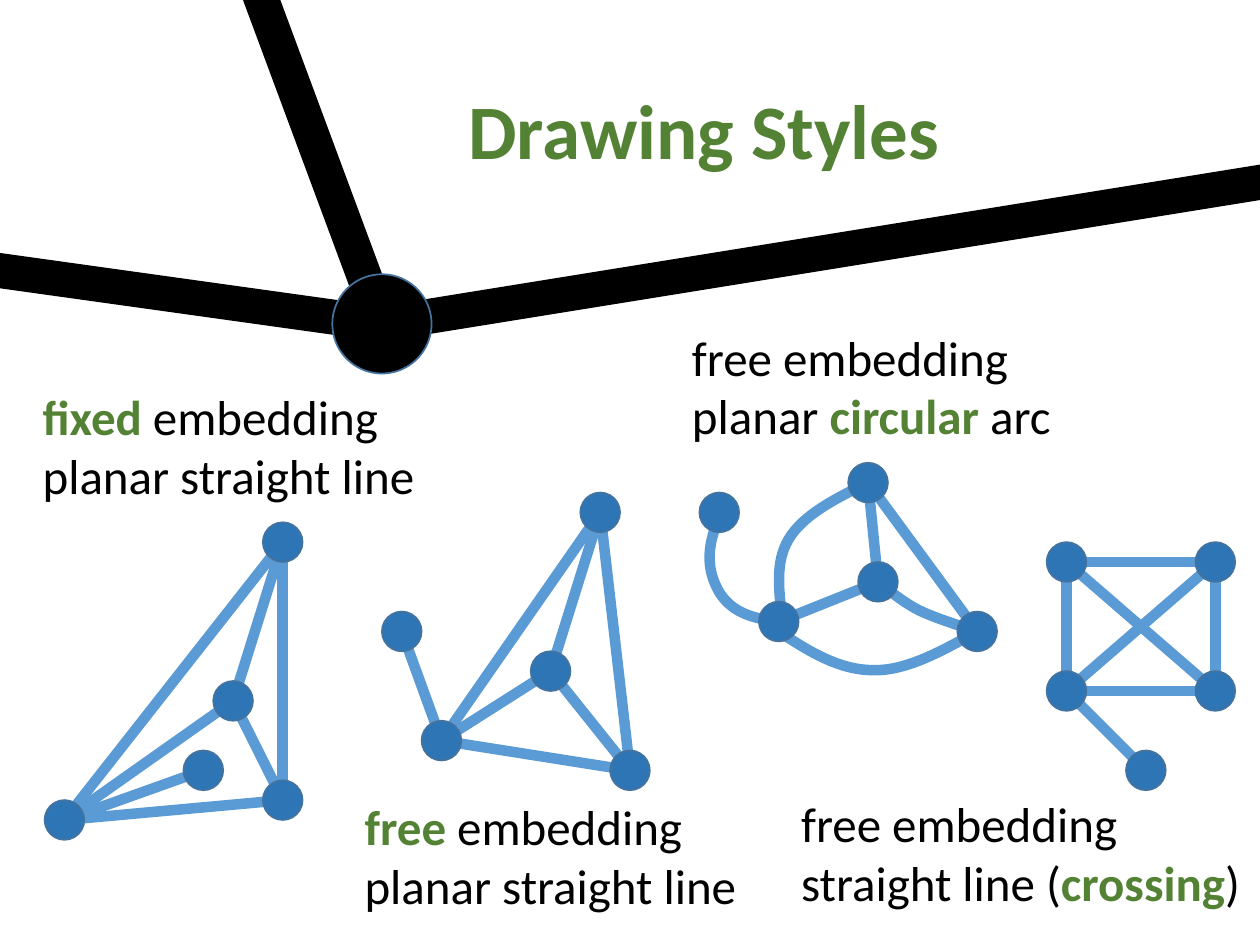
import pptx
import pptx.util
import pptx.dml.color
import pptx.enum.shapes
import pptx.enum.text
import pptx.oxml.ns
import pptx.oxml.xmlchemy

theme = {
    "font": "Calibri", "title": 44, "label": 28,
    "text": "000000", "green": "548235", "hub": "000000",
    "node": "2E75B6", "rim": "43739E", "edge": "5B9BD5",
}
rgb = pptx.dml.color.RGBColor.from_string
make = pptx.oxml.xmlchemy.OxmlElement
oval = pptx.enum.shapes.MSO_SHAPE.OVAL
straight = pptx.enum.shapes.MSO_CONNECTOR.STRAIGHT

# Grid: 2 mm cells, with the origin set in by a part of a cell
cell = pptx.util.Mm(2)
left, top = cell * 0.5, cell * 0.65

deck = pptx.Presentation()
deck.slide_width, deck.slide_height = pptx.util.Inches(10), pptx.util.Inches(7.5)
slide = deck.slides.add_slide(deck.slide_layouts[6])


def write(shapes, text, box, size, align="LEFT"):
    """Add a text box; words between asterisks are bold and green."""
    x, y, wide, high = box
    frame = shapes.add_textbox(int(left + x * cell), int(top + y * cell),
                               int(wide * cell), int(high * cell)).text_frame
    frame.word_wrap = False
    frame.auto_size = pptx.enum.text.MSO_AUTO_SIZE.SHAPE_TO_FIT_TEXT
    for i, row in enumerate(text.split("\n")):
        para = frame.paragraphs[0] if i == 0 else frame.add_paragraph()
        para.alignment = getattr(pptx.enum.text.PP_ALIGN, align)
        for j, part in enumerate(row.split("*")):
            if part:
                run = para.add_run()
                run.text = part
                run.font.name = theme["font"]
                run.font.size = pptx.util.Pt(size)
                run.font.bold = j % 2 == 1
                run.font.color.rgb = rgb(theme["green" if j % 2 else "text"])


def link(shapes, start, end, color, width):
    """Add a straight line between two grid points."""
    ends = [int(edge + v * cell) for point in (start, end)
            for edge, v in zip((left, top), point)]
    line = shapes.add_connector(straight, *ends)
    line.line.color.rgb = rgb(color)
    line.line.width = pptx.util.Pt(width)
    line._element.spPr.append(make("a:effectLst"))


# Figures: nodes by key, straight edges as key pairs, curves, label and its box
full = "tm tr lr lm lt rm lx"
arcs = [
    [(78, 63), (81, 65), (84.1, 66.9), (87.5, 66.9),
     (90.8, 67), (94.4, 65), (98, 63)],
    [(88, 58), (89.3, 59), (90.6, 60.1), (92.2, 60.9),
     (93.9, 61.7), (95.9, 62.3), (98, 63)],
    [(78.5, 62), (74.9, 61.8), (73.2, 60.8), (72.1, 59.2),
     (71, 57.4), (70.5, 55.2), (71.8, 52)],
    [(78.4, 62), (78, 59), (77.6, 56), (79, 53.7),
     (80.4, 51.3), (83.7, 49.6), (87, 48)],
]
graphs = [
    (dict(r=(28, 80), t=(28, 54), m=(23, 70), l=(6, 82), x=(20, 77)), full, [],
     "*fixed *embedding\nplanar straight line", (2.55, 37.7, 40.4, 13.2)),
    (dict(r=(63, 77), t=(60, 51), m=(55, 67), l=(44, 74), x=(40, 63)), full, [],
     "*free *embedding\nplanar straight line", (35, 79, 40.4, 13.2)),
    (dict(r=(98, 63), t=(87, 48), m=(88, 58), l=(78, 62), x=(72, 51)),
     "tm tr lm", arcs,
     "free embedding\nplanar *circular *arc", (68, 31.7, 38.7, 13.2)),
    (dict(r=(122, 69), t=(107, 56), m=(122, 56), l=(107, 69), x=(115, 77)), full, [],
     "free embedding\nstraight line (*crossing*)", (79, 78.7, 47, 13.2)),
]

# Large hub with three rays, and the title
hub = (38, 32)
discs = [(slide.shapes, hub, 10, theme["hub"])]
for end in [(-5, 26), (131, 17), (25, -3)]:
    link(slide.shapes, hub, end, theme["hub"], 20)
write(slide.shapes, "*Drawing Styles*", (45, 7, 50.5, 10.7), theme["title"], align="RIGHT")

# Edges, curves and labels, one group for each graph
for nodes, pairs, curves, text, box in graphs:
    shapes = slide.shapes.add_group_shape().shapes
    for curve in curves:
        points = [(int(left + c * cell), int(top + r * cell)) for c, r in curve]
        pen = shapes.build_freeform(*points[0])
        pen.add_line_segments(points[1:], close=False)
        arc = pen.convert_to_shape()
        arc.fill.background()
        arc.line.color.rgb = rgb(theme["edge"])
        arc.line.width = pptx.util.Pt(6)
        arc.shadow.inherit = False
        # Turn each three line segments into one Bezier segment
        steps = list(arc._element.iter(pptx.oxml.ns.qn("a:lnTo")))
        for i in range(0, len(steps), 3):
            bend = make("a:cubicBezTo")
            steps[i].addprevious(bend)
            for step in steps[i:i + 3]:
                bend.append(step[0])
                step.getparent().remove(step)
    for a, b in pairs.split():
        link(shapes, nodes[a], nodes[b], theme["edge"], 6)
    write(shapes, text, box, theme["label"])
    discs += [(shapes, point, 4, theme["node"]) for point in nodes.values()]

# Nodes on top of the lines
for shapes, (c, r), size, color in discs:
    disc = shapes.add_shape(oval, int(left + (c - size / 2) * cell),
                            int(top + (r - size / 2) * cell), size * cell, size * cell)
    disc.fill.solid()
    disc.fill.fore_color.rgb = rgb(color)
    disc.line.color.rgb = rgb(theme["rim"])
    disc.line.width = pptx.util.Pt(1)
    disc.shadow.inherit = False

deck.save("out.pptx")
